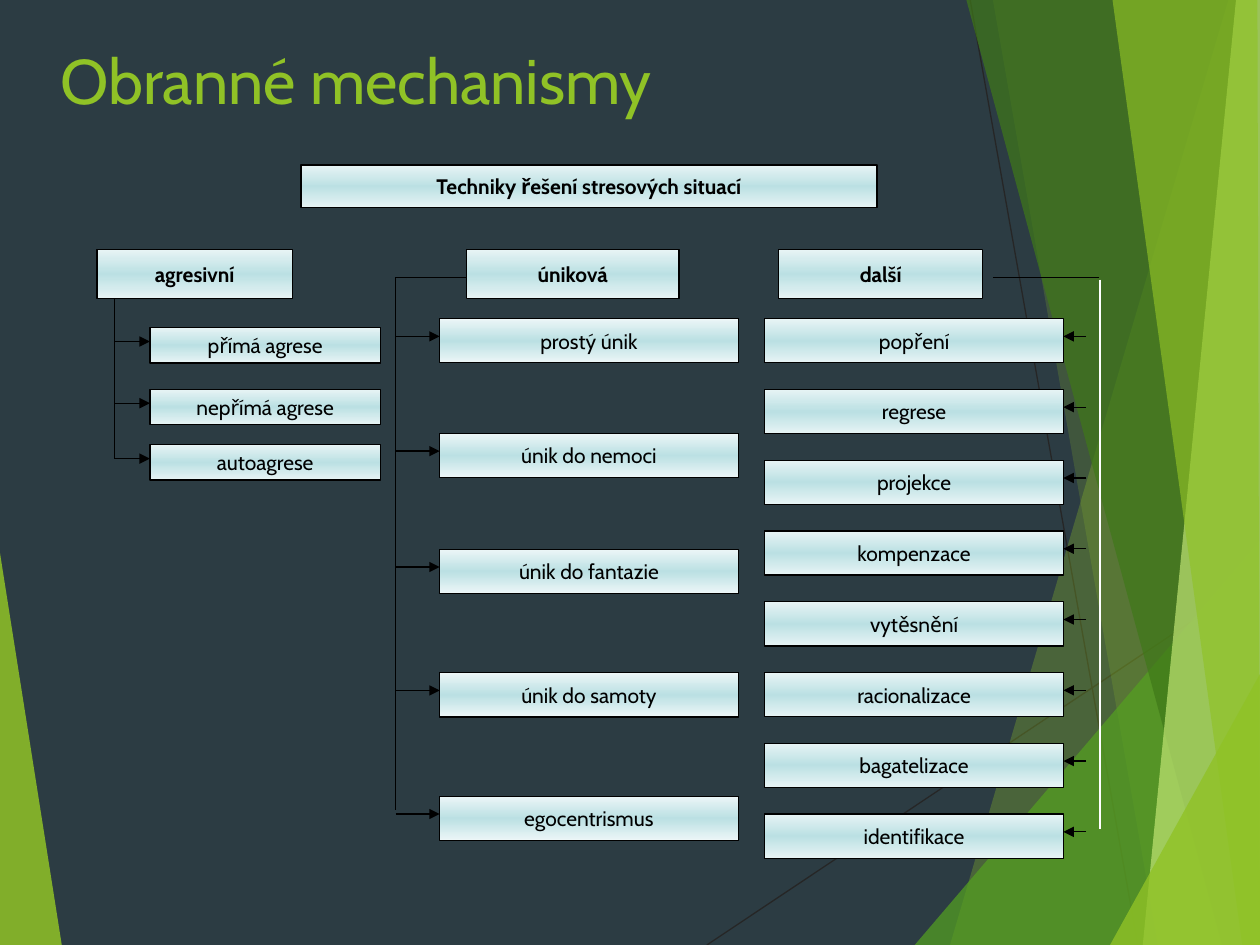
from copy import deepcopy
from dataclasses import dataclass

from lxml.etree import SubElement
from pptx import Presentation
from pptx.dml.color import RGBColor as RGB
from pptx.enum.shapes import MSO_CONNECTOR as CONN, MSO_SHAPE as SHAPE
from pptx.enum.text import MSO_ANCHOR as ANCHOR, PP_ALIGN as ALIGN
from pptx.oxml.ns import qn
from pptx.util import Emu, Inches, Pt


@dataclass(frozen=True)
class Theme:
    font: str = "Cabin"
    title_size: int = 36
    box_size: int = 12
    line_width: float = 0.75
    background: str = "2C3C43"
    title: str = "90C226"
    ink: str = "000000"
    ray: str = "262626"
    white: str = "FFFFFF"
    middle: str = "BBE0E3"
    edge: str = "E7F4F5"
    soft_edge: str = "ECF6F7"


T = Theme()

# All positions are percentages of the slide's width (x) and height (y)
TITLE = ("Obranné mechanismy", (3.8, 3.73, 77.9, 13.47))
ROOT = ("Techniky řešení stresových situací", (23.9, 17.47, 45.7, 4.53))
HEAD_TOP, HEAD_H = 26.4, 5.2
HEAD_LINE = 29.33

# trunk and branches: x of the trunk, x where arrows start and end
BRANCHES = [
    dict(head="agresivní", head_x=7.7, head_w=15.5,
         x=11.9, w=18.3, h=3.73, edge=T.edge,
         items=["přímá agrese", "nepřímá agrese", "autoagrese"],
         tops=[34.67, 41.2, 47.07],
         arrow=(9.1, 11.9), drop=1.47,
         lines=[(9.1, 31.6, 9.1, 48.6, T.ink)]),
    dict(head="úniková", head_x=37, head_w=16.9,
         x=34.9, w=23.7, h=4.67, edge=T.soft_edge,
         items=["prostý únik", "únik do nemoci", "únik do fantazie",
                "únik do samoty", "egocentrismus"],
         tops=[33.73, 45.87, 58.13, 71.2, 84.27],
         arrow=(31.4, 34.9), drop=1.87,
         lines=[(37, HEAD_LINE, 31.4, HEAD_LINE, T.ink),
                (31.4, HEAD_LINE, 31.4, 85.73, T.ink)]),
    dict(head="další", head_x=61.8, head_w=16.2,
         x=60.7, w=23.7, h=4.67, edge=T.edge,
         items=["popření", "regrese", "projekce", "kompenzace", "vytěsnění",
                "racionalizace", "bagatelizace", "identifikace"],
         tops=[33.73 + 7.49 * i for i in range(8)],
         arrow=(86.2, 84.4), drop=1.87,
         lines=[(78.8, HEAD_LINE, 87.2, HEAD_LINE, T.ink),
                (87.3, 29.6, 87.3, 87.73, T.white)]),
]

RAYS = [(56.1, 100, 100, 60.93), (77, 0, 90.3, 100)]
FACETS = [  # colour, opacity, corners
    ("90C226", 85, [(0, 58.53), (4.9, 100), (0, 100)]),
    ("90C226", 30, [(97.5, 0), (75.4, 100), (100, 100), (100, 0)]),
    ("90C226", 20, [(78.8, 0), (91.9, 100), (100, 100), (100, 0)]),
    ("54A021", 72, [(72.6, 100), (100, 57.2), (100, 100)]),
    ("3F7819", 70, [(76.7, 0), (97, 100), (100, 100), (100, 0)]),
    ("C0E474", 70, [(98.1, 0), (90.7, 100), (100, 100), (100, 0)]),
    ("90C226", 65, [(88.3, 0), (98.6, 100), (100, 100), (99.8, 0)]),
    ("90C226", 80, [(88.1, 100), (100, 71.33), (100, 100)]),
]

prs = Presentation()
prs.slide_width, prs.slide_height = Inches(10), Inches(7.5)
s = prs.slides.add_slide(prs.slide_layouts[6])
s.background.fill.solid()
s.background.fill.fore_color.rgb = RGB.from_string(T.background)


def emu(*shares):
    """Turn alternating x, y percentages into slide lengths."""
    sides = (prs.slide_width, prs.slide_height)
    return [Emu(round(sides[i % 2] * v / 100)) for i, v in enumerate(shares)]


def write(sp, text, size, color, bold=False):
    tf = sp.text_frame
    tf.word_wrap = True
    tf.text = text
    font = tf.paragraphs[0].runs[0].font
    font.name, font.size, font.bold = T.font, Pt(size), bold
    font.color.rgb = RGB.from_string(color)
    return tf


def add_line(x1, y1, x2, y2, color, arrow=False):
    line = s.shapes.add_connector(CONN.STRAIGHT, *emu(x1, y1, x2, y2))
    line.line.color.rgb = RGB.from_string(color)
    line.line.width = Pt(T.line_width)
    if arrow:
        SubElement(line.line._get_or_add_ln(), qn("a:tailEnd"), type="triangle")
    SubElement(line._element.spPr, qn("a:effectLst"))


def add_facet(color, opacity, corners):
    start, *rest = [emu(*c) for c in corners]
    builder = s.shapes.build_freeform(*start)
    builder.add_line_segments(rest, close=True)
    sp = builder.convert_to_shape()
    sp.shadow.inherit = False
    sp.line.fill.background()
    sp.fill.solid()
    sp.fill.fore_color.rgb = RGB.from_string(color)
    clr = sp._element.spPr.find(".//" + qn("a:srgbClr"))
    SubElement(clr, qn("a:alpha"), val=str(opacity * 1000))


def add_box(text, at, edge=T.edge, bold=False):
    sp = s.shapes.add_shape(SHAPE.RECTANGLE, *emu(*at))
    sp.shadow.inherit = False
    sp.line.color.rgb = RGB.from_string(T.ink)
    sp.line.width = Pt(T.line_width)
    # Three-stop vertical gradient
    sp.fill.gradient()
    sp.fill.gradient_angle = 90
    stops = sp._element.spPr.find(".//" + qn("a:gsLst"))
    stops.insert(1, deepcopy(stops[0]))
    for stop, place, color in zip(sp.fill.gradient_stops, (0, 0.5, 1),
                                  (edge, T.middle, edge)):
        stop.position = place
        stop.color.rgb = RGB.from_string(color)
    tf = write(sp, text, T.box_size, T.ink, bold)
    tf.vertical_anchor = ANCHOR.MIDDLE
    tf.paragraphs[0].alignment = ALIGN.CENTER


# Backdrop
for ray in RAYS:
    add_line(*ray, T.ray)
for facet in FACETS:
    add_facet(*facet)

# Title and top box
text, at = TITLE
title = s.shapes.add_textbox(*emu(*at))
write(title, text, T.title_size, T.title).vertical_anchor = ANCHOR.TOP
add_box(*ROOT, bold=True)

# Branches: heading, trunk lines, boxes with arrows
for b in BRANCHES:
    add_box(b["head"], (b["head_x"], HEAD_TOP, b["head_w"], HEAD_H), bold=True)
    for line in b["lines"]:
        add_line(*line)
    start, end = b["arrow"]
    for item, top in zip(b["items"], b["tops"]):
        add_box(item, (b["x"], top, b["w"], b["h"]), b["edge"])
        y = top + b["drop"]
        add_line(start, y, end, y, T.ink, arrow=True)

prs.save("out.pptx")
